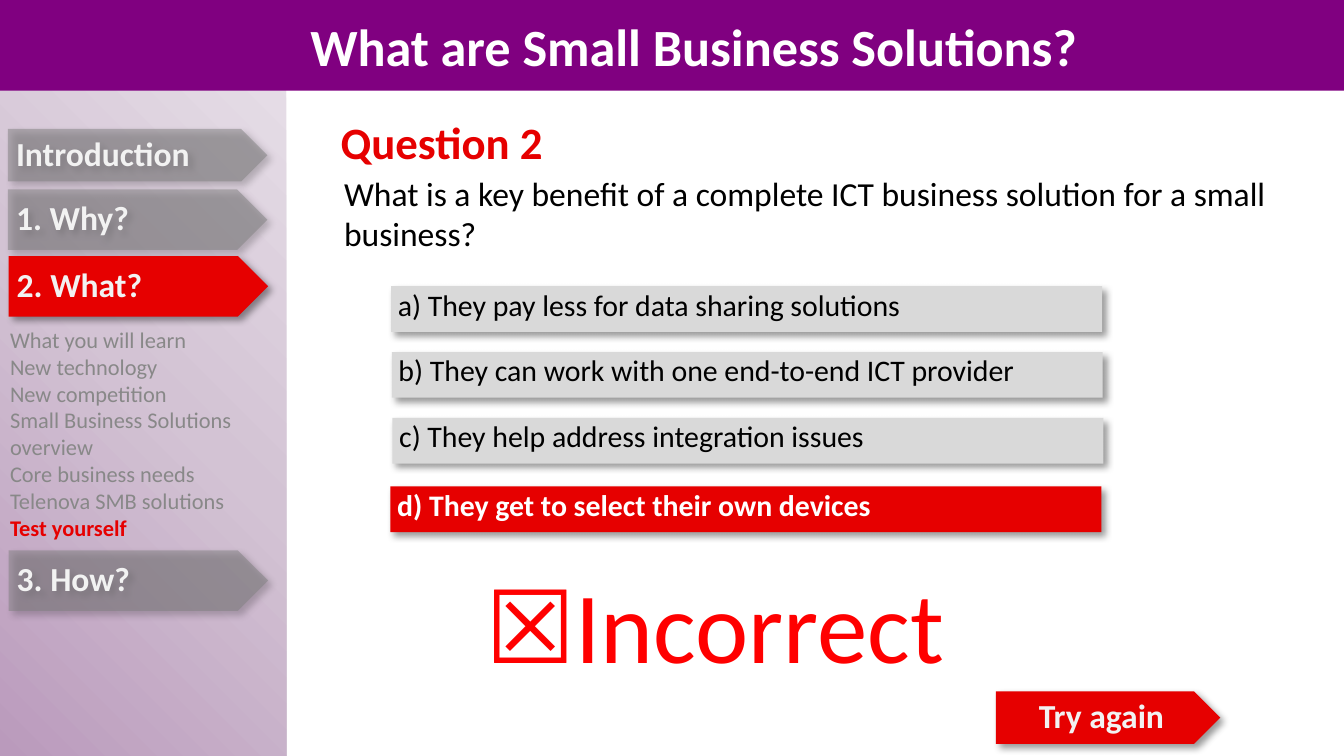
from lxml.etree import SubElement
from pptx import Presentation
from pptx.dml.color import RGBColor
from pptx.enum.shapes import MSO_SHAPE
from pptx.enum.text import MSO_ANCHOR, MSO_AUTO_SIZE, PP_ALIGN
from pptx.oxml import parse_xml
from pptx.oxml.ns import nsdecls, qn
from pptx.util import Pt

SCALE = 4572
WIDTH, HEIGHT = 2000, 1125
FONT = "Calibri"
COLORS = {
    "red": "E60000", "alert": "FF0000", "purple": "800080",
    "gray": "808080", "pale": "D9D9D9", "muted": "888888",
    "light": "F2F2F2", "white": "FFFFFF", "black": "000000",
    "deep": "BA9ABC", "mid": "D3C3D4", "soft": "E9E2EA",
}


def px(*sizes):
    return [size * SCALE for size in sizes]


def color(name):
    return RGBColor.from_string(COLORS[name])


def write(frame, text, size=18, ink="black", bold=False, align=PP_ALIGN.LEFT,
          anchor=MSO_ANCHOR.TOP, wrap=True, pad=(0, 0), space=None, mark=None):
    frame.auto_size = MSO_AUTO_SIZE.NONE
    frame.word_wrap = wrap
    frame.vertical_anchor = anchor
    frame.margin_left, frame.margin_right = px(*pad)
    frame.margin_top = frame.margin_bottom = 0
    frame.text = text
    for para in frame.paragraphs:
        para.alignment = align
        para.line_spacing = space
        hot = para.text == mark
        for run in para.runs:
            run.font.name = FONT
            run.font.size = Pt(size)
            run.font.bold = bold or hot
            run.font.color.rgb = color("red" if hot else ink)


class Deck:
    def __init__(self):
        self.file = Presentation()
        self.file.slide_width, self.file.slide_height = px(WIDTH, HEIGHT)
        self.slide = self.file.slides.add_slide(self.file.slide_layouts[5])

    def title(self, box, text, **style):
        head = self.slide.shapes.title
        head.left, head.top, head.width, head.height = px(*box)
        write(head.text_frame, text, **style)

    def text(self, box, text, **style):
        write(self.slide.shapes.add_textbox(*px(*box)).text_frame, text, **style)

    def shape(self, box, fill, kind=MSO_SHAPE.RECTANGLE):
        shape = self.slide.shapes.add_shape(kind, *px(*box))
        shape.fill.solid()
        shape.fill.fore_color.rgb = color(fill)
        shape.line.fill.background()
        shape.shadow.inherit = False
        return shape

    def fade(self, box, *stops):
        props = self.shape(box, stops[0])._element.spPr
        step = 100000 // (len(stops) - 1)
        parts = "".join(
            f'<a:gs pos="{i * step}"><a:srgbClr val="{COLORS[name]}"/></a:gs>'
            for i, name in enumerate(stops))
        props.replace(props.find(qn("a:solidFill")), parse_xml(
            f'<a:gradFill {nsdecls("a")}><a:gsLst>{parts}</a:gsLst>'
            '<a:path path="circle"><a:fillToRect t="100000" r="100000"/>'
            '</a:path></a:gradFill>'))

    def shade(self, shape):
        effects = shape._element.spPr.find(qn("a:effectLst"))
        effects.append(parse_xml(
            f'<a:outerShdw {nsdecls("a")} blurRad="50800" dist="38100" '
            'dir="2700000" algn="tl" rotWithShape="0">'
            f'<a:srgbClr val="{COLORS["black"]}"><a:alpha val="40000"/>'
            '</a:srgbClr></a:outerShdw>'))

    def choice(self, box, text, picked=False):
        bar = self.shape(box, "red" if picked else "pale")
        self.shade(bar)
        write(bar.text_frame, text, size=16, bold=picked, pad=(10, 0),
              ink="white" if picked else "black")

    def button(self, box, text, live=False, align=PP_ALIGN.LEFT):
        arrow = self.shape(box, "red" if live else "gray", MSO_SHAPE.PENTAGON)
        if not live:
            tint = arrow._element.spPr.find(qn("a:solidFill"))[0]
            SubElement(tint, qn("a:alpha"), val="50000")
        self.shade(arrow)
        pad = (12, 2) if align == PP_ALIGN.LEFT else (2, 2)
        write(arrow.text_frame, text, ink="light", bold=True, align=align,
              anchor=MSO_ANCHOR.MIDDLE, pad=pad, space=0.9)


def main():
    deck = Deck()
    deck.title((507, 171, 1424, 192), "Question 2", size=24, ink="red",
               bold=True)
    deck.text((512, 257, 1418, 782), "What is a key benefit of a complete ICT "
              "business solution for a small business?")

    answers = [
        ("a) They pay less for data sharing solutions", 582, 426),
        ("b) They can work with one end-to-end ICT provider", 583, 524),
        ("c) They help address integration issues", 584, 622),
        ("d) They get to select their own devices", 581, 724),
    ]
    for answer, left, top in answers:
        deck.choice((left, top, 1058, 68), answer,
                    picked=answer.startswith("d"))

    deck.button((1482, 1029, 334, 78), "Try again", live=True,
                align=PP_ALIGN.CENTER)
    deck.text((722, 838, 686, 200), "☒Incorrect", size=54, ink="alert",
              wrap=False)

    deck.fade((0, 0, 426, HEIGHT), "deep", "mid", "soft")
    menu = [
        ("Introduction", 12, 192, 78),
        ("1. Why?", 12, 282, 90),
        ("2. What?", 13, 381, 90),
        ("3. How?", 13, 819, 90),
    ]
    for label, left, top, height in menu:
        deck.button((left, top, 386, height), label, live=label == "2. What?")

    topics = [
        "What you will learn",
        "New technology",
        "New competition",
        "Small Business Solutions overview",
        "Core business needs",
        "Telenova SMB solutions",
        "Test yourself",
    ]
    deck.text((15, 485, 392, 300), "\n".join(topics), size=12, ink="muted",
              mark="Test yourself")

    deck.shape((0, 0, WIDTH, 135), "purple")
    deck.text((308, -10, 1448, 156), "What are Small Business Solutions?",
              size=28, ink="white", bold=True, align=PP_ALIGN.CENTER,
              anchor=MSO_ANCHOR.MIDDLE)
    deck.file.save("out.pptx")


if __name__ == "__main__":
    main()
